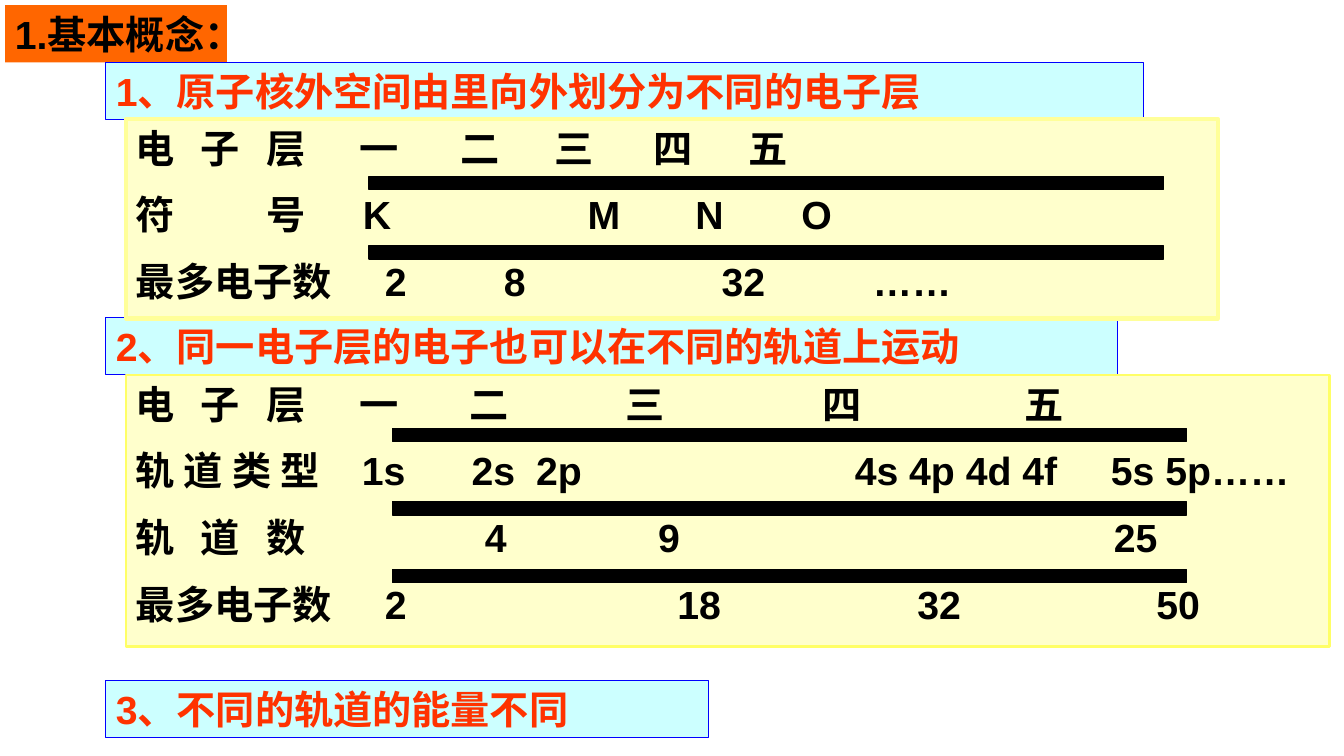
from dataclasses import dataclass

from lxml import etree
from pptx import Presentation
from pptx.dml.color import RGBColor
from pptx.enum.shapes import MSO_SHAPE
from pptx.enum.text import MSO_ANCHOR, PP_ALIGN
from pptx.oxml.ns import qn
from pptx.shapes.autoshape import Shape
from pptx.slide import Slide
from pptx.util import Inches, Pt

RECTANGLE = MSO_SHAPE.RECTANGLE
TOP = MSO_ANCHOR.TOP
LEFT = PP_ALIGN.LEFT


@dataclass(frozen=True)
class Theme:
    font: str = "Arial"
    text_size: float = 28
    row_gap: float = 14
    black: str = "000000"
    orange: str = "FF6600"
    red: str = "FF3300"
    pale_blue: str = "CCFFFF"
    blue: str = "0000FF"
    cream: str = "FFFFCC"
    light_yellow: str = "FFFF99"
    yellow: str = "FFFF66"


THEME = Theme()


@dataclass(frozen=True)
class Cell:
    """A text and its distance from the left edge of the row."""
    text: str
    offset: float = 0


Row = list[Cell]


@dataclass(frozen=True)
class Panel:
    left: float
    top: float
    width: float
    height: float
    fill: str
    rows: list[Row]
    color: str = THEME.black
    line: str | None = None
    line_width: float = 0.75
    wrap: bool = True


@dataclass(frozen=True)
class Bar:
    left: float
    top: float
    width: float = 7.88
    height: float = 0.13


def heading(top: float, width: float, text: str) -> Panel:
    return Panel(1.05, top, width, 0.57, THEME.pale_blue, [[Cell(text)]],
                 THEME.red, THEME.blue)


TITLE = Panel(0.05, 0.05, 2.2, 0.57, THEME.orange, [[Cell("1.基本概念：")]], wrap=False)

HEADINGS = [
    heading(0.62, 10.29, "1、原子核外空间由里向外划分为不同的电子层"),
    heading(3.15, 10.03, "2、同一电子层的电子也可以在不同的轨道上运动"),
    heading(6.75, 5.98, "3、不同的轨道的能量不同"),
]

LAYER_LABEL = [Cell("电"), Cell("子", 0.64), Cell("层", 1.3), Cell("一", 2.22)]

SHELLS = Panel(1.25, 1.18, 10.83, 1.98, THEME.cream, [
    LAYER_LABEL + [Cell("二", 3.22), Cell("三", 4.15), Cell("四", 5.13), Cell("五", 6.08)],
    [Cell("符"), Cell("号", 1.3), Cell("K", 2.25), Cell("M", 4.48),
     Cell("N", 5.55), Cell("O", 6.6)],
    [Cell("最多电子数"), Cell("2", 2.47), Cell("8", 3.65), Cell("32", 5.81),
     Cell("……", 7.31)],
], line=THEME.light_yellow, line_width=3)

ORBITALS = Panel(1.25, 3.72, 11.94, 2.69, THEME.cream, [
    LAYER_LABEL + [Cell("二", 3.31), Cell("三", 4.86), Cell("四", 6.81), Cell("五", 8.81)],
    [Cell("轨 道 类 型"), Cell("1s", 2.24), Cell("2s", 3.33), Cell("2p", 3.97),
     Cell("4s 4p 4d 4f", 7.13), Cell("5s 5p……", 9.67)],
    [Cell("轨"), Cell("道", 0.64), Cell("数", 1.3), Cell("4", 3.46),
     Cell("9", 5.18), Cell("25", 9.7)],
    [Cell("最多电子数"), Cell("2", 2.47), Cell("18", 5.37), Cell("32", 7.75),
     Cell("50", 10.12)],
], line=THEME.yellow, line_width=2)

SHELL_BARS = [Bar(3.66, top) for top in (1.75, 2.44)]
ORBITAL_BARS = [Bar(3.89, top) for top in (4.25, 4.98, 5.65)]


def add_rectangle(slide: Slide, area: Panel | Bar, fill: str,
                  line: str | None, line_width: float) -> Shape:
    shape = slide.shapes.add_shape(
        RECTANGLE, Inches(area.left), Inches(area.top),
        Inches(area.width), Inches(area.height))
    shape.shadow.inherit = False
    shape.fill.solid()
    shape.fill.fore_color.rgb = RGBColor.from_string(fill)
    if line is None:
        shape.line.fill.background()
    else:
        shape.line.color.rgb = RGBColor.from_string(line)
        shape.line.width = Pt(line_width)
    return shape


def add_panel(slide: Slide, panel: Panel) -> None:
    shape = add_rectangle(slide, panel, panel.fill, panel.line, panel.line_width)
    frame = shape.text_frame
    frame.word_wrap = panel.wrap
    frame.vertical_anchor = TOP
    for index, row in enumerate(panel.rows):
        paragraph = frame.add_paragraph() if index else frame.paragraphs[0]
        paragraph.alignment = LEFT
        paragraph.space_before = Pt(THEME.row_gap if index else 0)
        # Each cell after the first starts at its own tab stop
        if len(row) > 1:
            properties = paragraph._p.get_or_add_pPr()
            tab_list = etree.SubElement(properties, qn("a:tabLst"))
            for cell in row[1:]:
                etree.SubElement(tab_list, qn("a:tab"),
                                 pos=str(Inches(cell.offset)), algn="l")
        for column, cell in enumerate(row):
            run = paragraph.add_run()
            run.text = f"\t{cell.text}" if column else cell.text
            run.font.name = THEME.font
            run.font.size = Pt(THEME.text_size)
            run.font.bold = True
            run.font.color.rgb = RGBColor.from_string(panel.color)


def add_bars(slide: Slide, bars: list[Bar]) -> None:
    for bar in bars:
        add_rectangle(slide, bar, THEME.black, THEME.black, 0.75)


def main() -> None:
    presentation = Presentation()
    presentation.slide_width = Inches(13.33)
    presentation.slide_height = Inches(7.5)
    slide = presentation.slides.add_slide(presentation.slide_layouts[6])

    # Title and section headings
    for panel in [TITLE, *HEADINGS]:
        add_panel(slide, panel)

    # Electron shells
    add_panel(slide, SHELLS)
    add_bars(slide, SHELL_BARS)

    # Orbitals within each shell
    add_panel(slide, ORBITALS)
    add_bars(slide, ORBITAL_BARS)

    presentation.save("out.pptx")


if __name__ == "__main__":
    main()
